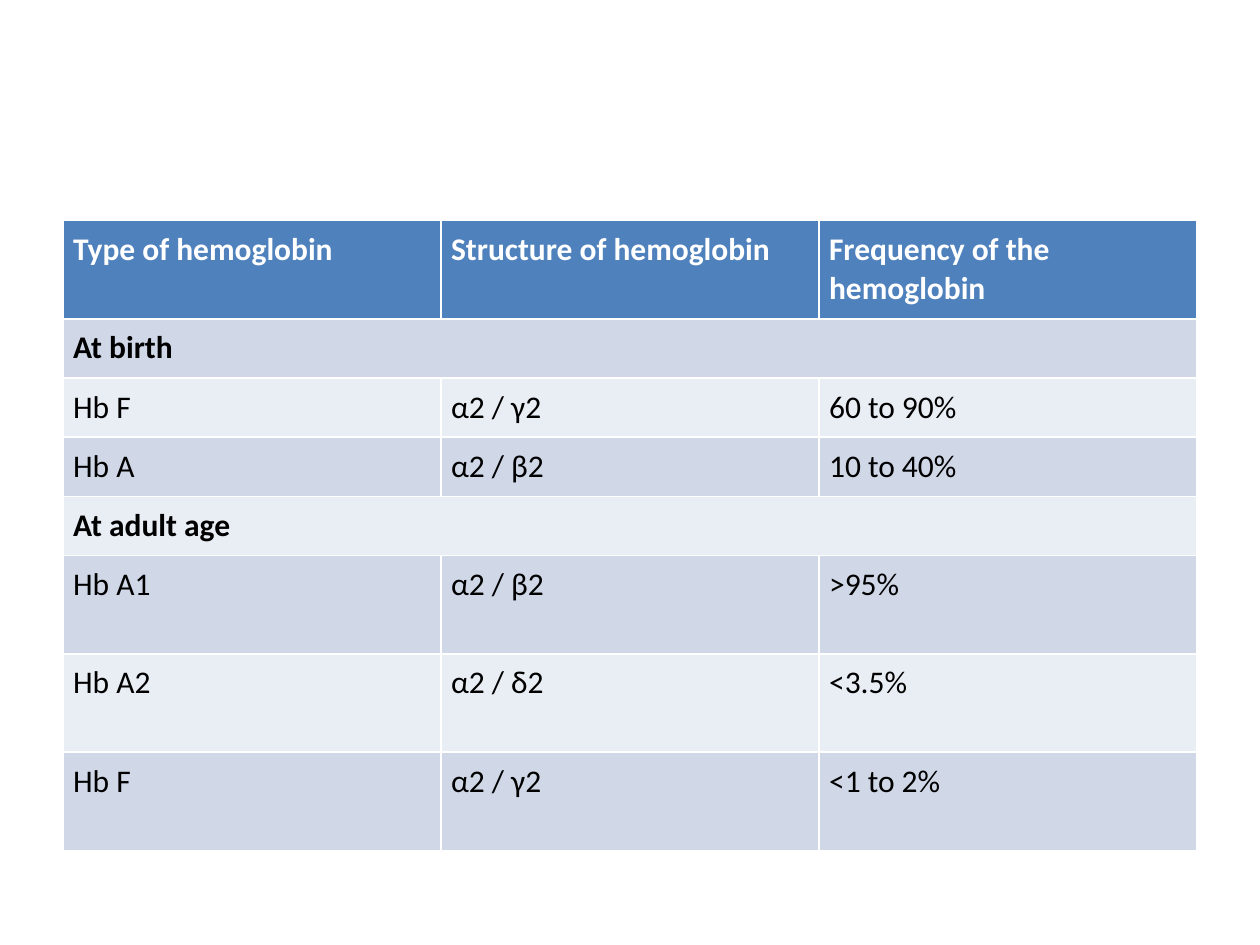
from dataclasses import dataclass

from pptx import Presentation
from pptx.dml.color import RGBColor as Rgb
from pptx.util import Inches, Pt


@dataclass(frozen=True)
class Theme:
    font: str = "Calibri"
    size: int = 18
    head: str = "4F81BD"
    bands: tuple = ("E9EDF4", "D0D8E8")
    light: str = "FFFFFF"
    dark: str = "000000"
    inset: float = 0.08
    low: float = 0.47
    tall: float = 0.78


THEME = Theme()

# Each row: height, then its texts; a single text spans the whole row.
ROWS = [
    (THEME.tall, ["Type of hemoglobin", "Structure of hemoglobin",
                  "Frequency of the hemoglobin"]),
    (THEME.low, ["At birth"]),
    (THEME.low, ["Hb F", "α2 / γ2", "60 to 90%"]),
    (THEME.low, ["Hb A", "α2 / β2", "10 to 40%"]),
    (THEME.low, ["At adult age"]),
    (THEME.tall, ["Hb A1", "α2 / β2", ">95%"]),
    (THEME.tall, ["Hb A2", "α2 / δ2", "<3.5%"]),
    (THEME.tall, ["Hb F", "α2 / γ2", "<1 to 2%"]),
]


def paint(cell, fill):
    cell.fill.solid()
    cell.fill.fore_color.rgb = Rgb.from_string(fill)


def write(cell, text, color, bold):
    inset = Inches(THEME.inset)
    cell.margin_left = cell.margin_right = inset
    cell.margin_top = cell.margin_bottom = inset
    cell.text_frame.text = text
    font = cell.text_frame.paragraphs[0].runs[0].font
    font.name = THEME.font
    font.size = Pt(THEME.size)
    font.bold = bold
    font.color.rgb = Rgb.from_string(color)


def fill_row(table, index, texts):
    head = index == 0
    group = len(texts) == 1
    cells = list(table.rows[index].cells)
    for cell in cells:
        paint(cell, THEME.head if head else THEME.bands[index % 2])
    if group:
        cells[0].merge(cells[-1])
    for cell, text in zip(cells, texts):
        write(cell, text, THEME.light if head else THEME.dark, head or group)


def add_grid(slide):
    high = sum(height for height, _ in ROWS)
    frame = slide.shapes.add_table(len(ROWS), 3, Inches(0.5), Inches(1.75),
                                   Inches(9), Inches(high))
    table = frame.table
    for index, (height, texts) in enumerate(ROWS):
        table.rows[index].height = Inches(height)
        fill_row(table, index, texts)


def main():
    deck = Presentation()
    deck.slide_width, deck.slide_height = Inches(10), Inches(7.5)
    slide = deck.slides.add_slide(deck.slide_layouts[6])
    add_grid(slide)
    deck.save("out.pptx")


if __name__ == "__main__":
    main()
